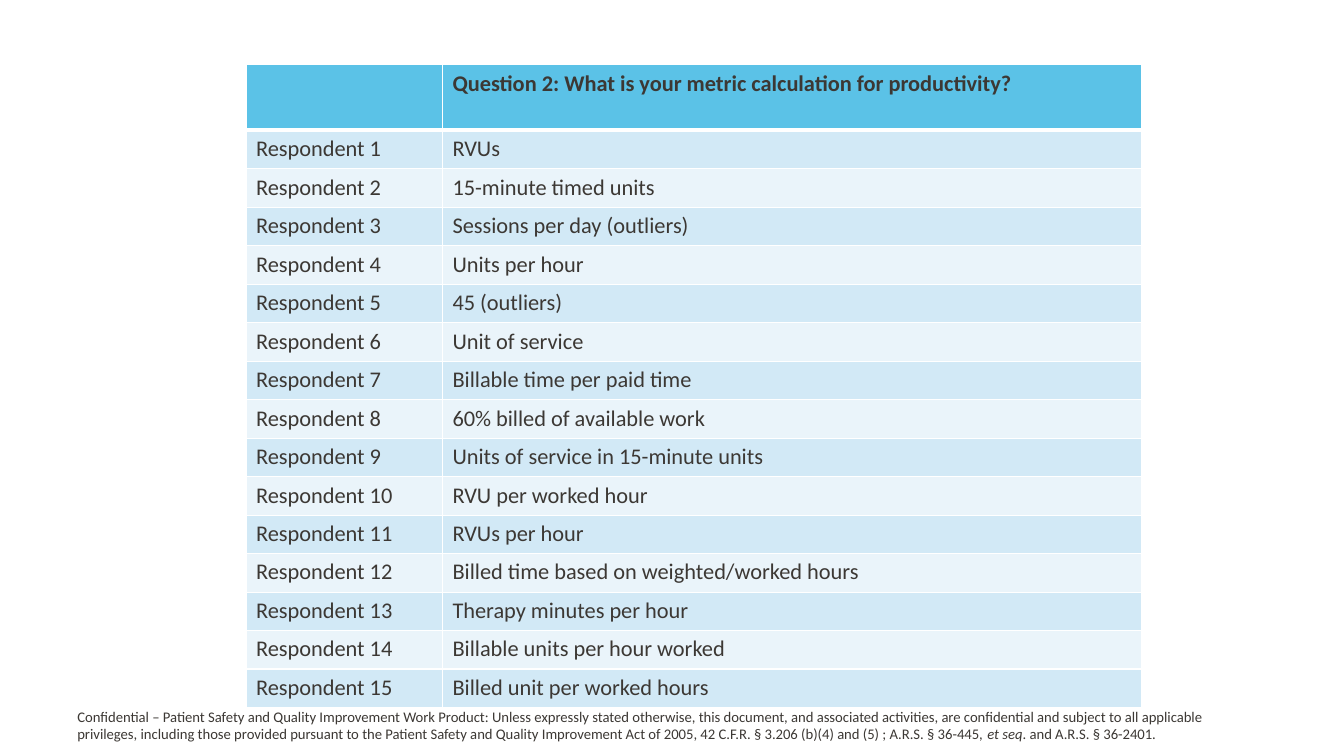
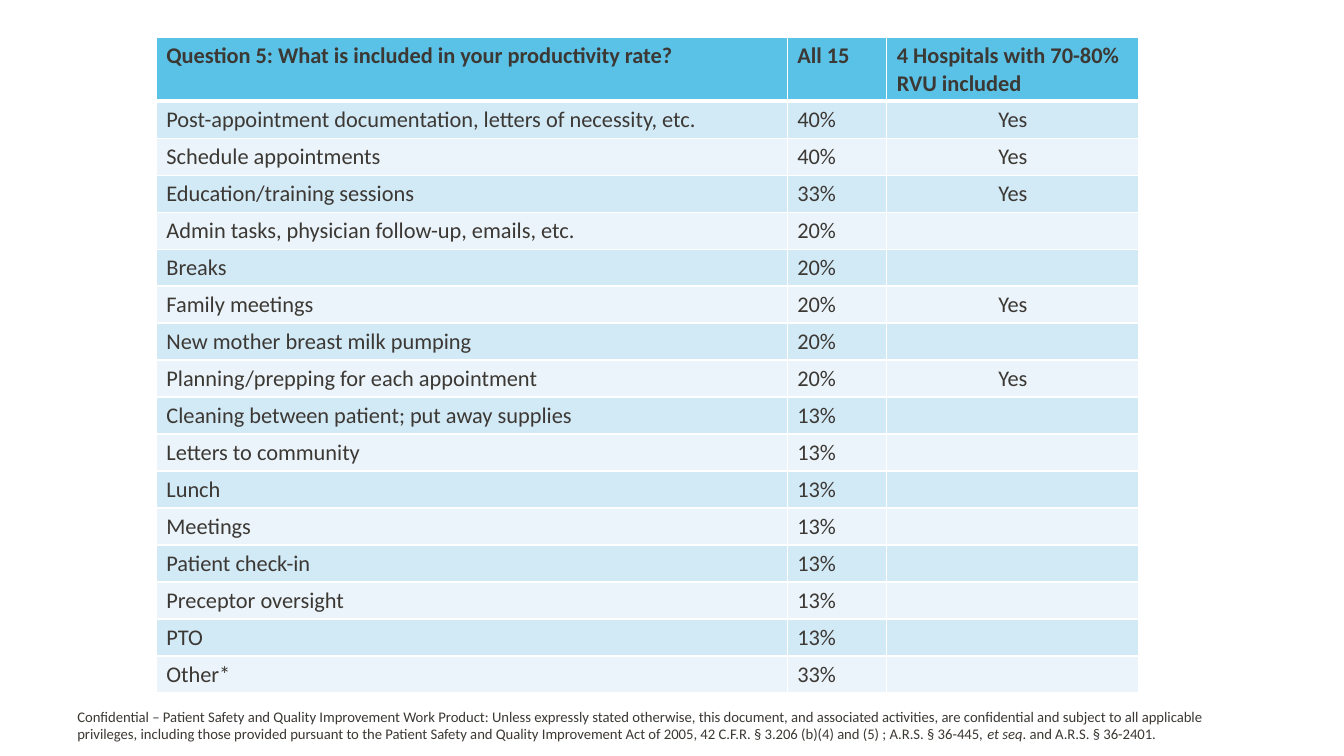
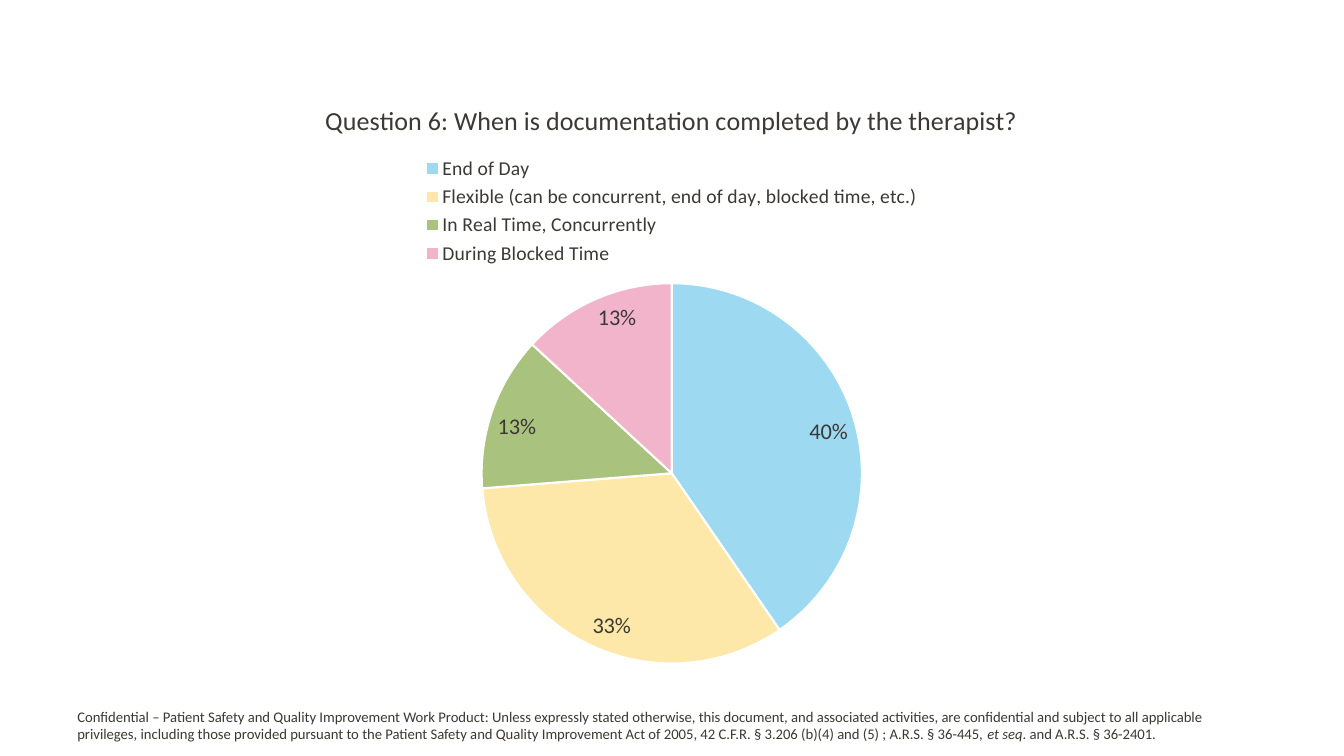
"""Build three survey slides on therapist productivity."""
import pptx
import pptx.chart.data
import pptx.dml.color
import pptx.enum.chart
import pptx.enum.text
import pptx.oxml.ns
import pptx.util
from dataclasses import dataclass
from lxml import etree

Cm = pptx.util.Cm
Pt = pptx.util.Pt
qn = pptx.oxml.ns.qn


@dataclass(frozen=True)
class Theme:
    font: str = "Calibri"
    ink: str = "3C3834"
    line: str = "FFFFFF"
    header: str = "5BC2E7"
    bands: tuple = ("D2E9F6", "EAF4FA")
    slices: tuple = ("9DDAF1", "FDE8AA", "A9C37F", "F1B4CB")
    table_size: float = 16
    footer_size: float = 10.5
    chart_title_size: float = 18.6
    legend_size: float = 14
    label_size: float = 16
    rule: float = 1
    header_rule: float = 3
    slice_rule: float = 1.5


THEME = Theme()

FOOTER = (
    ("Confidential – Patient Safety and Quality Improvement Work Product: "
     "Unless expressly stated otherwise, this document, and associated activities, "
     "are confidential and subject to all applicable privileges, including those "
     "provided pursuant to the Patient Safety and Quality Improvement Act of 2005, "
     "42 C.F.R. § 3.206 (b)(4) and (5) ; A.R.S. § 36-445, ", False),
    ("et seq", True),
    (". and A.R.S. § 36-2401.", False),
)

METRICS = [
    "RVUs",
    "15-minute timed units",
    "Sessions per day (outliers)",
    "Units per hour",
    "45 (outliers)",
    "Unit of service",
    "Billable time per paid time",
    "60% billed of available work",
    "Units of service in 15-minute units",
    "RVU per worked hour",
    "RVUs per hour",
    "Billed time based on weighted/worked hours",
    "Therapy minutes per hour",
    "Billable units per hour worked",
    "Billed unit per worked hours",
]

METRIC_TABLE = {
    "left": 6.2, "top": 1.63, "columns": (4.95, 17.63),
    "header_height": 1.65, "row_height": 0.97, "centred": (),
    "rows": [("", "Question 2: What is your metric calculation for productivity?")]
    + [(f"Respondent {number}", metric) for number, metric in enumerate(METRICS, 1)],
}

INCLUDED_TABLE = {
    "left": 3.94, "top": 0.94, "columns": (15.9, 2.51, 6.35),
    "header_height": 1.55, "row_height": 0.91, "centred": (2,),
    "rows": [
        ("Question 5: What is included in your productivity rate?", "All 15",
         "4 Hospitals with 70-80% RVU included"),
        ("Post-appointment documentation, letters of necessity, etc.", "40%", "Yes"),
        ("Schedule appointments", "40%", "Yes"),
        ("Education/training sessions", "33%", "Yes"),
        ("Admin tasks, physician follow-up, emails, etc.", "20%", ""),
        ("Breaks", "20%", ""),
        ("Family meetings", "20%", "Yes"),
        ("New mother breast milk pumping", "20%", ""),
        ("Planning/prepping for each appointment", "20%", "Yes"),
        ("Cleaning between patient; put away supplies", "13%", ""),
        ("Letters to community", "13%", ""),
        ("Lunch", "13%", ""),
        ("Meetings", "13%", ""),
        ("Patient check-in", "13%", ""),
        ("Preceptor oversight", "13%", ""),
        ("PTO", "13%", ""),
        ("Other*", "33%", ""),
    ],
}

DOCUMENTATION_TITLE = "Question 6: When is documentation completed by the therapist?"
DOCUMENTATION = {
    "End of Day": 40,
    "Flexible (can be concurrent, end of day, blocked time, etc.)": 33,
    "In Real Time, Concurrently": 13,
    "During Blocked Time": 13,
}


def colour(value):
    return pptx.dml.color.RGBColor.from_string(value)


def style_font(font, size, bold=False, italic=False):
    font.name = THEME.font
    font.size = Pt(size)
    font.bold = bold
    font.italic = italic
    font.color.rgb = colour(THEME.ink)


def add_footer(slide):
    box = slide.shapes.add_textbox(Cm(1.7), Cm(17.7), Cm(29.8), Cm(1.14))
    frame = box.text_frame
    frame.word_wrap = True
    frame.auto_size = pptx.enum.text.MSO_AUTO_SIZE.SHAPE_TO_FIT_TEXT
    for text, italic in FOOTER:
        run = frame.paragraphs[0].add_run()
        run.text = text
        style_font(run.font, THEME.footer_size, italic=italic)


def set_borders(cell, top, bottom):
    properties = cell._tc.get_or_add_tcPr()
    widths = {"a:lnL": THEME.rule, "a:lnR": THEME.rule, "a:lnT": top, "a:lnB": bottom}
    for index, (tag, width) in enumerate(widths.items()):
        line = etree.Element(qn(tag), w=str(Pt(width)))
        fill = etree.SubElement(line, qn("a:solidFill"))
        etree.SubElement(fill, qn("a:srgbClr"), val=THEME.line)
        properties.insert(index, line)


def fill_cell(cell, text, row, centred):
    is_header = row == 0
    cell.fill.solid()
    cell.fill.fore_color.rgb = colour(
        THEME.header if is_header else THEME.bands[(row - 1) % len(THEME.bands)])
    set_borders(cell, THEME.header_rule if row == 1 else THEME.rule,
                THEME.header_rule if is_header else THEME.rule)
    paragraph = cell.text_frame.paragraphs[0]
    if centred and not is_header:
        paragraph.alignment = pptx.enum.text.PP_ALIGN.CENTER
    if text:
        paragraph.text = text
        style_font(paragraph.runs[0].font, THEME.table_size, bold=is_header)
    else:
        etree.SubElement(paragraph._p, qn("a:endParaRPr"),
                         sz=str(int(THEME.table_size * 100)))


def add_survey_table(slide, content):
    rows, columns = content["rows"], content["columns"]
    heights = [content["header_height"]] + [content["row_height"]] * (len(rows) - 1)
    table = slide.shapes.add_table(
        len(rows), len(columns), Cm(content["left"]), Cm(content["top"]),
        Cm(sum(columns)), Cm(sum(heights))).table
    for column, width in zip(table.columns, columns):
        column.width = Cm(width)
    for row, (texts, height) in enumerate(zip(rows, heights)):
        table.rows[row].height = Cm(height)
        for column, text in enumerate(texts):
            fill_cell(table.cell(row, column), text, row, column in content["centred"])


def add_documentation_chart(slide):
    data = pptx.chart.data.CategoryChartData()
    data.categories = list(DOCUMENTATION)
    data.add_series(DOCUMENTATION_TITLE, list(DOCUMENTATION.values()))
    chart = slide.shapes.add_chart(
        pptx.enum.chart.XL_CHART_TYPE.PIE,
        Cm(5.64), Cm(2.01), Cm(22.58), Cm(15.06), data).chart
    style_font(chart.font, 10)

    chart.has_title = True
    title = chart.chart_title
    title.include_in_layout = False
    title.text_frame.text = DOCUMENTATION_TITLE
    style_font(title.text_frame.paragraphs[0].runs[0].font, THEME.chart_title_size)

    chart.has_legend = True
    chart.legend.position = pptx.enum.chart.XL_LEGEND_POSITION.TOP
    chart.legend.include_in_layout = False
    style_font(chart.legend.font, THEME.legend_size)

    plot = chart.plots[0]
    plot.vary_by_categories = True
    for index, value in enumerate(THEME.slices):
        slice_format = plot.series[0].points[index].format
        slice_format.fill.solid()
        slice_format.fill.fore_color.rgb = colour(value)
        slice_format.line.color.rgb = colour(THEME.line)
        slice_format.line.width = Pt(THEME.slice_rule)

    plot.has_data_labels = True
    labels = plot.data_labels
    labels.show_percentage = True
    labels.show_value = False
    labels.number_format = "0%"
    labels.number_format_is_linked = False
    labels.position = pptx.enum.chart.XL_LABEL_POSITION.INSIDE_END
    style_font(labels.font, THEME.label_size)


def main():
    presentation = pptx.Presentation()
    presentation.slide_width = Cm(33.87)
    presentation.slide_height = Cm(19.05)
    blank = presentation.slide_layouts[6]
    builders = (
        lambda slide: add_survey_table(slide, METRIC_TABLE),
        lambda slide: add_survey_table(slide, INCLUDED_TABLE),
        add_documentation_chart,
    )
    for build in builders:
        slide = presentation.slides.add_slide(blank)
        build(slide)
        add_footer(slide)
    presentation.save("out.pptx")


if __name__ == "__main__":
    main()
